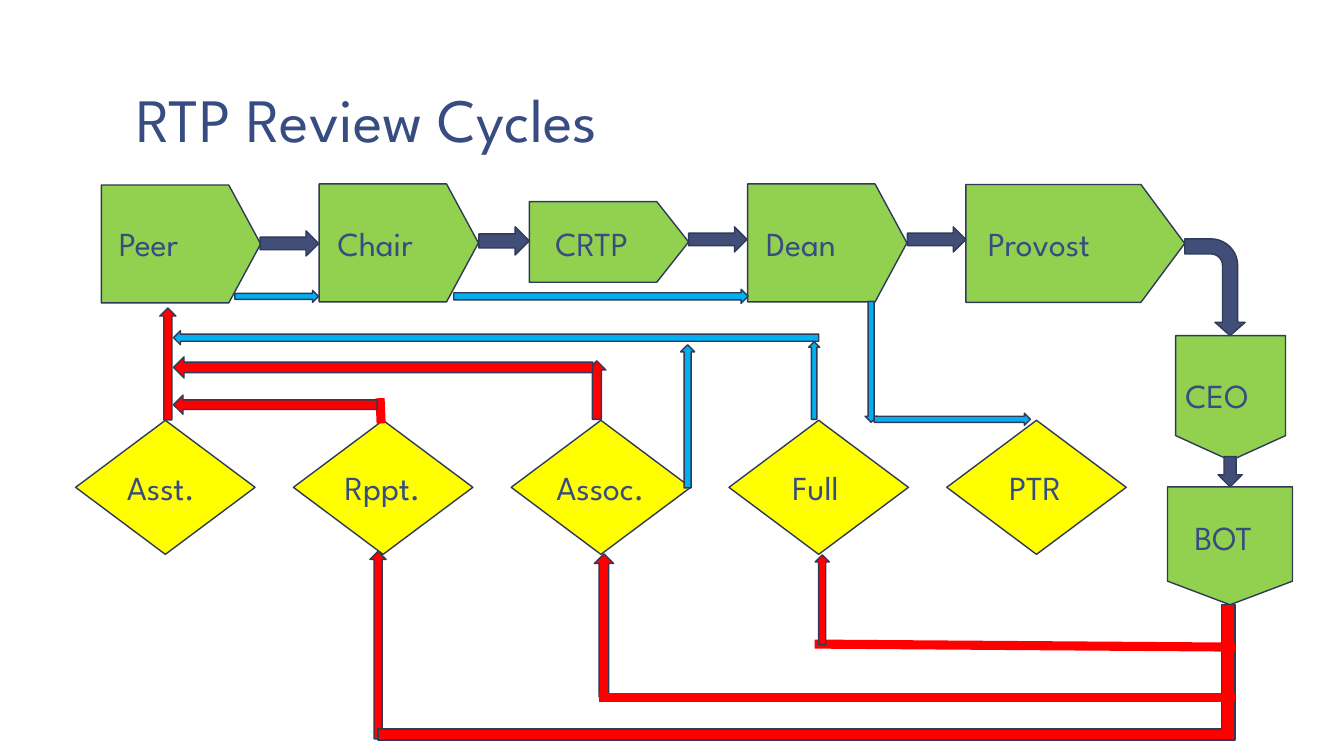
from lxml import etree
from pptx import Presentation
from pptx.dml.color import RGBColor
from pptx.enum import shapes, text
from pptx.oxml import ns
from pptx.util import Inches, Pt

FONT = "League Spartan"
COLORS = {"text": "374C81", "outline": "303A58", "stage": "92D050", "rank": "FFFF00",
          "navy": "414E77", "red": "FF0000", "blue": "00B0F0"}
KINDS = shapes.MSO_SHAPE

# Label, shape box, rotation, label box
STAGES = [
    ("Peer", (1.21, 1.63, 1.17, 1.58), 270, (1.08, 2.16, 1.25, 0.5)),
    ("Chair", (3.37, 1.62, 1.17, 1.58), 270, (3.25, 2.16, 1.25, 0.5)),
    ("Dean", (7.62, 1.62, 1.17, 1.58), 270, (7.5, 2.16, 1.25, 0.5)),
    ("CRTP", (5.64, 1.61, 0.8, 1.58), 270, (5.41, 2.16, 1.25, 0.5)),
    ("Provost", (10.08, 1.33, 1.17, 2.17), 270, (9.7, 2.16, 1.71, 0.5)),
    ("CEO", (11.66, 3.33, 1.09, 1.24), 0, (11.66, 3.67, 1.17, 0.5)),
    ("BOT", (11.58, 4.83, 1.24, 1.17), 0, (11.75, 5.08, 1.33, 0.5)),
]

# Label and its offset from the left corner of the diamond
RANKS = [("Asst.", 0.41), ("Rppt.", 0.41), ("Assoc.", 0.35), ("Full", 0.53), ("PTR", 0.52)]
RANK_LEFT, RANK_PITCH = 0.75, 2.16

# Unrotated box, rotation of a right arrow
STAGE_ARROWS = [
    ((2.58, 2.29, 0.58, 0.25), 0),
    ((4.75, 2.25, 0.5, 0.28), 0),
    ((6.83, 2.25, 0.58, 0.25), 0),
    ((9, 2.25, 0.58, 0.25), 0),
    ((12.05, 4.56, 0.3, 0.24), 90),
]
RETURN_ARROWS = [
    ("red", (1.11, 3.53, 1.11, 0.16), 270),
    ("red", (2.82, 6.32, 1.86, 0.16), 270),
    ("red", (5.28, 6.11, 1.42, 0.19), 270),
]
REVIEW_ARROWS = [
    ("blue", (1.72, 3.28, 6.4, 0.14), 180),
    ("blue", (7.69, 3.72, 0.77, 0.11), 270),
    ("red", (5.63, 3.78, 0.58, 0.18), 270),
    ("red", (1.72, 3.54, 4.16, 0.21), 180),
    ("red", (1.72, 3.92, 2.02, 0.19), 180),
    ("blue", (4.5, 2.87, 2.92, 0.14), 0),
    ("blue", (2.33, 2.88, 0.83, 0.12), 0),
    ("blue", (8.04, 3.53, 1.2, 0.12), 90),
    ("blue", (8.67, 4.1, 1.55, 0.12), 0),
    ("red", (7.71, 5.88, 0.89, 0.14), 270),
    ("blue", (6.11, 4.06, 1.42, 0.14), 270),
]
RETURN_LINES = [
    (3.77, 3.95, 3.78, 4.2),
    (8.08, 6.39, 12.25, 6.42),
    (5.94, 6.92, 12.25, 6.92),
]


def rgb(name):
    return RGBColor.from_string(COLORS[name])


def add_run(p, content, size):
    r = p.add_run()
    r.text = content
    r.font.name = FONT
    r.font.size = Pt(size)
    r.font.color.rgb = rgb("text")


def add_title(s, content):
    sp = s.shapes.title
    sp.left, sp.top, sp.width, sp.height = map(Inches, (1.22, 0.08, 11.11, 1.53))
    tf = sp.text_frame
    tf.word_wrap = True
    tf.auto_size = text.MSO_AUTO_SIZE.NONE
    tf.vertical_anchor = text.MSO_ANCHOR.BOTTOM
    tf.margin_left = tf.margin_right = Inches(0.13)
    tf.margin_top = tf.margin_bottom = Inches(0.07)
    p = tf.paragraphs[0]
    p.alignment = text.PP_ALIGN.LEFT
    p.line_spacing = 0.85
    add_run(p, content, 44)


def add_label(s, content, box):
    tf = s.shapes.add_textbox(*map(Inches, box)).text_frame
    tf.word_wrap = True
    add_run(tf.paragraphs[0], content, 24)


def add_block(s, kind, box, color, rotation=0, adjustments=()):
    sp = s.shapes.add_shape(kind, *map(Inches, box))
    sp.rotation = rotation
    sp.shadow.inherit = False
    sp.fill.solid()
    sp.fill.fore_color.rgb = rgb(color)
    sp.line.color.rgb = rgb("outline")
    sp.line.width = Pt(1)
    for i, value in enumerate(adjustments):
        sp.adjustments[i] = value
    return sp


def add_line(s, ends):
    line = s.shapes.add_connector(shapes.MSO_CONNECTOR.STRAIGHT, *map(Inches, ends))
    line.line.color.rgb = rgb("red")
    line.line.width = Pt(6.5)
    etree.SubElement(line._element.spPr, ns.qn("a:effectLst"))


def add_arrows(s, arrows):
    for color, box, rotation in arrows:
        add_block(s, KINDS.RIGHT_ARROW, box, color, rotation)


def main():
    prs = Presentation()
    prs.slide_width, prs.slide_height = Inches(13.33), Inches(7.5)
    s = prs.slides.add_slide(prs.slide_layouts.get_by_name("Title Only"))
    add_title(s, "RTP Review Cycles")

    for label, box, rotation, label_box in STAGES:
        add_block(s, KINDS.FLOWCHART_OFFPAGE_CONNECTOR, box, "stage", rotation)
        add_label(s, label, label_box)
    add_arrows(s, [("navy", *arrow) for arrow in STAGE_ARROWS])

    for i, (label, offset) in enumerate(RANKS):
        left = RANK_LEFT + i * RANK_PITCH
        add_block(s, KINDS.FLOWCHART_DECISION, (left, 4.17, 1.78, 1.33), "rank")
        add_label(s, label, (left + offset, 4.58, 1.25, 0.5))

    add_arrows(s, RETURN_ARROWS)
    corner = add_block(s, KINDS.CORNER, (3.75, 6, 8.5, 1.34), "red",
                       adjustments=(0.08, 0.1))
    corner._element.spPr.xfrm.set("flipH", "1")
    for ends in RETURN_LINES:
        add_line(s, ends)
    add_block(s, KINDS.BENT_ARROW, (11.57, 2.55, 0.96, 0.6), "navy", 90,
              (0.25, 0.25, 0.22, 0.44))
    add_arrows(s, REVIEW_ARROWS)

    prs.save("out.pptx")


if __name__ == "__main__":
    main()
